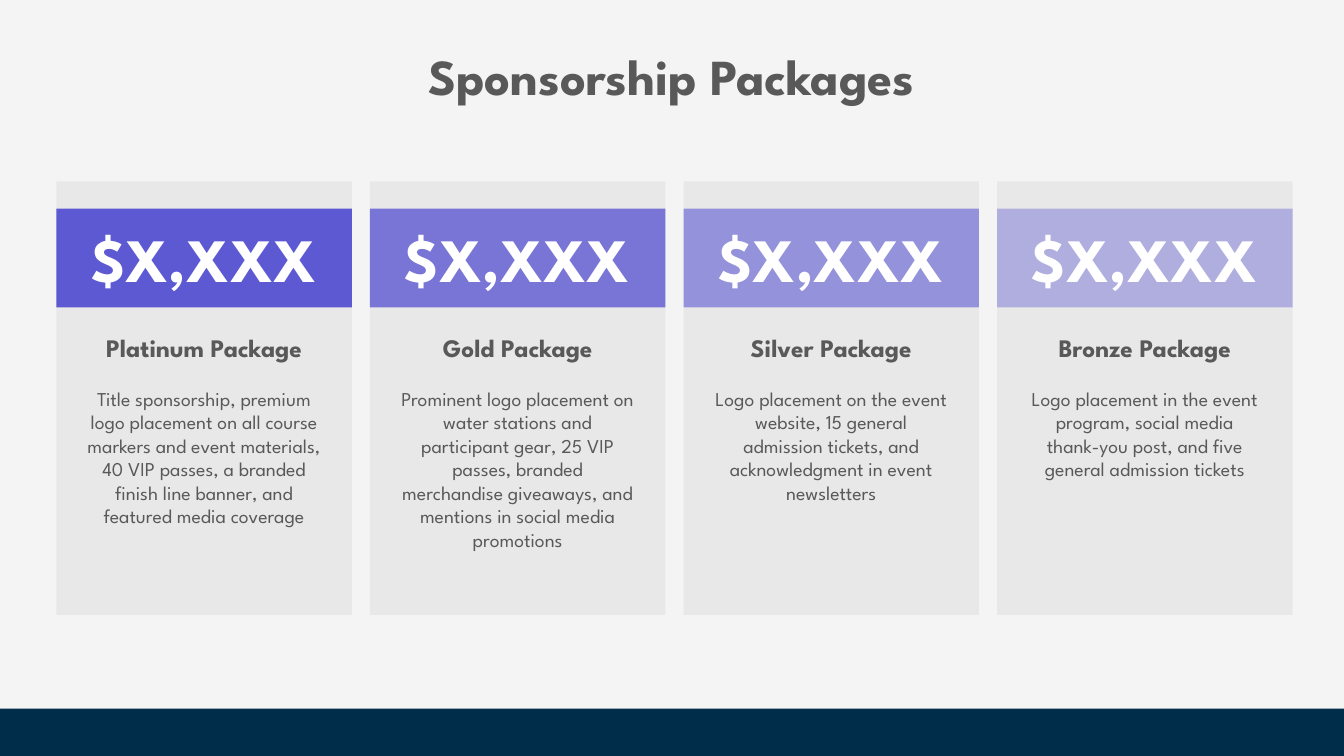
from lxml.etree import SubElement
from pptx import Presentation
from pptx.dml.color import RGBColor
from pptx.enum.shapes import MSO_SHAPE as Shape
from pptx.enum.text import MSO_ANCHOR as Anchor, MSO_AUTO_SIZE as Fit, PP_ALIGN as Align
from pptx.oxml.ns import qn
from pptx.util import Inches, Pt

FONT = "League Spartan"
HUES = {"back": "F4F4F4", "text": "595959", "card": "E7E6E6",
        "band": "5C59D3", "price": "FFFFFF", "foot": "002D4A"}
PRICE = "$X,XXX"
TIERS = [
    ("Platinum Package", "Title sponsorship, premium logo placement on all course markers "
     "and event materials, 40 VIP passes, a branded finish line banner, "
     "and featured media coverage", 100),
    ("Gold Package", "Prominent logo placement on water stations and participant gear, "
     "25 VIP passes, branded merchandise giveaways, "
     "and mentions in social media promotions", 80),
    ("Silver Package", "Logo placement on the event website, 15 general admission tickets, "
     "and acknowledgment in event newsletters", 60),
    ("Bronze Package", "Logo placement in the event program, social media thank-you post, "
     "and five general admission tickets", 40),
]


def tint(fill, hue, alpha=100):
    """Fill solidly with a named colour at an opacity in percent."""
    fill.solid()
    fill.fore_color.rgb = RGBColor.from_string(HUES[hue])
    if alpha < 100:
        color = fill._xPr.find(".//" + qn("a:srgbClr"))
        SubElement(color, qn("a:alpha"), val=str(alpha * 1000))


def write(para, text, size, hue="text", bold=True):
    """Add one centred run to a paragraph."""
    para.alignment = Align.CENTER
    run = para.add_run()
    run.text = text
    font = run.font
    font.name, font.size, font.bold = FONT, Pt(size), bold
    font.color.rgb = RGBColor.from_string(HUES[hue])


def block(slide, box, hue, alpha=100):
    """Draw a plain rectangle and return it."""
    rect = slide.shapes.add_shape(Shape.RECTANGLE, *map(Inches, box))
    rect.shadow.inherit = False
    rect.line.fill.background()
    tint(rect.fill, hue, alpha)
    return rect


def head(slide, box, text):
    """Place the slide title."""
    title = slide.shapes.title
    title.left, title.top, title.width, title.height = map(Inches, box)
    frame = title.text_frame
    frame.auto_size = Fit.NONE
    frame.vertical_anchor = Anchor.TOP
    write(frame.paragraphs[0], text, 36)


def card(slide, box, name, perks, alpha):
    """Place one package card with its price band."""
    left, top, width, _ = box
    frame = block(slide, box, "card", 80).text_frame
    frame.word_wrap = True
    frame.vertical_anchor = Anchor.TOP
    frame.margin_left = frame.margin_right = frame.margin_bottom = Inches(0.3)
    frame.margin_top = Inches(1.5)
    para = frame.paragraphs[0]
    para.space_after = Pt(17)
    write(para, name, 18)
    write(frame.add_paragraph(), perks, 14, bold=False)

    band = block(slide, (left, top + 0.27, width, 0.98), "band", alpha).text_frame
    band.word_wrap = True
    band.vertical_anchor = Anchor.MIDDLE
    write(band.paragraphs[0], PRICE, 44, "price")


def cards(slide, box, gap):
    """Spread the package cards evenly across a box."""
    left, top, width, height = box
    wide = (width - gap * (len(TIERS) - 1)) / len(TIERS)
    for i, tier in enumerate(TIERS):
        card(slide, (left + i * (wide + gap), top, wide, height), *tier)


def main():
    """Build and save the slide."""
    deck = Presentation()
    deck.slide_width, deck.slide_height = Inches(13.33), Inches(7.5)
    slide = deck.slides.add_slide(deck.slide_layouts[5])
    tint(slide.background.fill, "back")
    head(slide, (2.82, 0.4, 7.68, 0.71), "Sponsorship Packages")
    cards(slide, (0.56, 1.8, 12.26, 4.3), 0.18)
    block(slide, (0, 7.03, 13.33, 0.47), "foot")
    deck.save("out.pptx")


if __name__ == "__main__":
    main()
